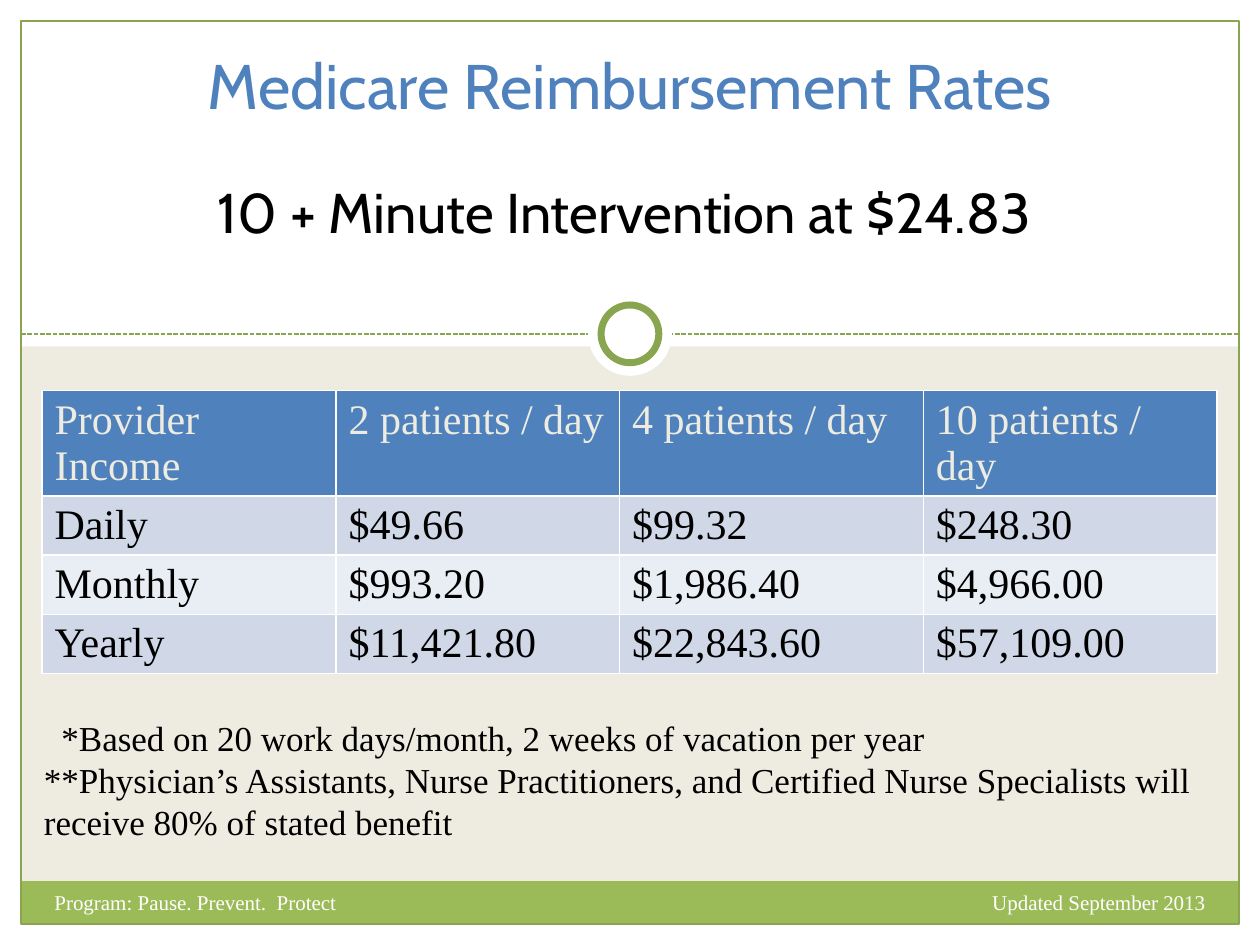
from lxml.etree import SubElement
from pptx import Presentation
from pptx.dml.color import RGBColor
from pptx.enum.dml import MSO_LINE
from pptx.enum.shapes import MSO_CONNECTOR, MSO_SHAPE
from pptx.enum.text import MSO_ANCHOR, PP_ALIGN
from pptx.oxml.ns import qn
from pptx.util import Pt

# Content
TITLE = "Medicare Reimbursement Rates"
SUBTITLE = "10 + Minute Intervention at $24.83"
RATES = [
    ("Provider\nIncome", "2 patients / day", "4 patients / day", "10 patients / day"),
    ("Daily", "$49.66", "$99.32", "$248.30"),
    ("Monthly", "$993.20", "$1,986.40", "$4,966.00"),
    ("Yearly", "$11,421.80", "$22,843.60", "$57,109.00"),
]
NOTES = (
    "*Based on 20 work days/month, 2 weeks of vacation per year\n"
    "**Physician’s Assistants, Nurse Practitioners, and Certified Nurse "
    "Specialists will receive 80% of stated benefit"
)
CAMPAIGN = "Program: Pause. Prevent.  Protect"
UPDATED = "Updated September 2013"

# Style
HEADING_FONT, BODY_FONT = "Cabin", "Times New Roman"
WHITE = RGBColor(0xFF, 0xFF, 0xFF)
BLACK = RGBColor(0, 0, 0)
BEIGE = RGBColor(0xEE, 0xEC, 0xE1)
BLUE = RGBColor(0x4F, 0x81, 0xBD)
GREEN = RGBColor(0x9B, 0xBB, 0x59)
DARK_GREEN = RGBColor(0x89, 0xA5, 0x4F)
BANDS = (RGBColor(0xD0, 0xD8, 0xE8), RGBColor(0xE9, 0xED, 0xF4))

# Layout in points
WIDTH, HEIGHT, MARGIN = 720, 540, 12
BAND_HEIGHT, FOOTER_HEIGHT = 198, 24.5
DIVIDER_TOP = 190.8
COLUMN_WIDTHS = (168, 162, 173.6, 168)
ROW_HEIGHTS = (60, 33.7, 33.7, 33.7)


def add_shape(slide, kind, left, top, width, height, fill=None, line=None, weight=0):
    shape = slide.shapes.add_shape(kind, Pt(left), Pt(top), Pt(width), Pt(height))
    shape.shadow.inherit = False
    if fill is None:
        shape.fill.background()
    else:
        shape.fill.solid()
        shape.fill.fore_color.rgb = fill
    if line is None:
        shape.line.fill.background()
    else:
        shape.line.color.rgb = line
        shape.line.width = Pt(weight)


def add_ring(slide, diameter, line=None, weight=0):
    add_shape(slide, MSO_SHAPE.OVAL, (WIDTH - diameter) / 2, DIVIDER_TOP - diameter / 2,
              diameter, diameter, WHITE, line, weight)


def write(text_frame, text, font, size, color, align=PP_ALIGN.LEFT):
    text_frame.text = text
    text_frame.word_wrap = True
    for paragraph in text_frame.paragraphs:
        paragraph.alignment = align
        for run in paragraph.runs:
            run.font.name, run.font.size = font, Pt(size)
            run.font.bold = False
            run.font.color.rgb = color


def add_text(slide, left, top, width, height, *style):
    box = slide.shapes.add_textbox(Pt(left), Pt(top), Pt(width), Pt(height))
    write(box.text_frame, *style)
    return box


def add_borders(cell):
    properties = cell._tc.get_or_add_tcPr()
    for index, side in enumerate(("lnL", "lnR", "lnT", "lnB")):
        border = properties.makeelement(qn(f"a:{side}"), {"w": str(Pt(1))})
        fill = SubElement(border, qn("a:solidFill"))
        SubElement(fill, qn("a:srgbClr"), val=str(WHITE))
        properties.insert(index, border)


presentation = Presentation()
presentation.slide_width, presentation.slide_height = Pt(WIDTH), Pt(HEIGHT)
slide = presentation.slides.add_slide(presentation.slide_layouts[5])
slide.background.fill.solid()
slide.background.fill.fore_color.rgb = BEIGE

# White margins, top band and green footer
inner_width, inner_height = WIDTH - 2 * MARGIN, HEIGHT - 2 * MARGIN
for area in (
    (0, HEIGHT - MARGIN, WIDTH, MARGIN),
    (WIDTH - MARGIN, 0, MARGIN, HEIGHT),
    (0, 0, MARGIN, HEIGHT),
    (0, 0, WIDTH, BAND_HEIGHT),
):
    add_shape(slide, MSO_SHAPE.RECTANGLE, *area, WHITE)
add_shape(slide, MSO_SHAPE.RECTANGLE, MARGIN, HEIGHT - MARGIN - FOOTER_HEIGHT,
          inner_width, FOOTER_HEIGHT, GREEN)

# Dashed divider, frame and ring
divider = slide.shapes.add_connector(MSO_CONNECTOR.STRAIGHT, Pt(MARGIN), Pt(DIVIDER_TOP),
                                     Pt(WIDTH - MARGIN), Pt(DIVIDER_TOP))
divider.line.color.rgb = DARK_GREEN
divider.line.width = Pt(0.9)
divider.line.dash_style = MSO_LINE.SQUARE_DOT
SubElement(divider.element.spPr, qn("a:effectLst"))
add_shape(slide, MSO_SHAPE.RECTANGLE, MARGIN, MARGIN, inner_width, inner_height,
          line=DARK_GREEN, weight=0.75)
add_ring(slide, 48)
add_ring(slide, 33, DARK_GREEN, 4)

# Title, brought in front of the white band
title = slide.shapes.title
title.left, title.top, title.width, title.height = Pt(MARGIN), Pt(MARGIN), Pt(inner_width), Pt(72)
write(title.text_frame, TITLE, HEADING_FONT, 36, BLUE, PP_ALIGN.CENTER)
title.text_frame.vertical_anchor = MSO_ANCHOR.MIDDLE
title.element.getparent().append(title.element)

# Rates table
table = slide.shapes.add_table(len(RATES), len(COLUMN_WIDTHS), Pt(24), Pt(223.2),
                               Pt(sum(COLUMN_WIDTHS)), Pt(sum(ROW_HEIGHTS))).table
for column, width in zip(table.columns, COLUMN_WIDTHS):
    column.width = Pt(width)
for row_index, (row, height, values) in enumerate(zip(table.rows, ROW_HEIGHTS, RATES)):
    row.height = Pt(height)
    is_header = row_index == 0
    for cell, value in zip(row.cells, values):
        write(cell.text_frame, value, BODY_FONT, 24, BEIGE if is_header else BLACK)
        cell.fill.solid()
        cell.fill.fore_color.rgb = BLUE if is_header else BANDS[(row_index - 1) % 2]
        add_borders(cell)

# Notes, the first one indented
notes = add_text(slide, 18, 406, 678, 80, NOTES, BODY_FONT, 20, BLACK)
notes.text_frame.paragraphs[0]._p.get_or_add_pPr().set("indent", str(Pt(10)))

# Subtitle and footer texts
add_text(slide, 42, 98, 630, 46, SUBTITLE, HEADING_FONT, 32, BLACK, PP_ALIGN.CENTER)
add_text(slide, 456, 504.5, 240, 29, UPDATED, BODY_FONT, 12, WHITE, PP_ALIGN.RIGHT)
add_text(slide, 24, 505, 360, 29, CAMPAIGN, BODY_FONT, 12, WHITE)

presentation.save("out.pptx")
